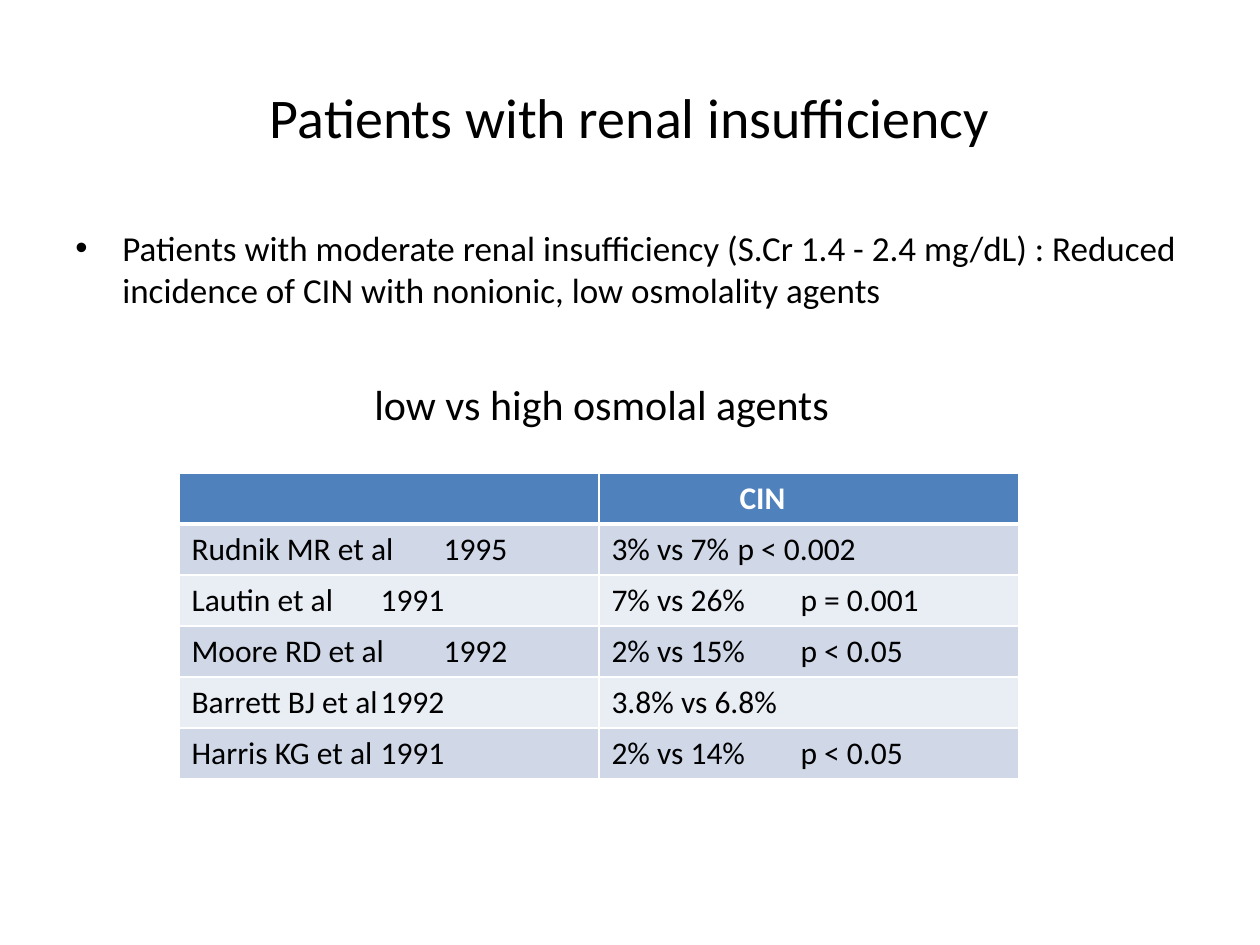
from dataclasses import dataclass

from lxml.etree import SubElement
from pptx import Presentation
from pptx.dml.color import RGBColor
from pptx.enum.text import MSO_ANCHOR, PP_ALIGN
from pptx.oxml.ns import qn
from pptx.util import Emu, Pt

EMU_PER_PIXEL = 914400 / 126
FONT = "Calibri"
COLORS = {
    "text": "000000",
    "white": "FFFFFF",
    "header": "4F81BD",
    "odd_row": "D0D8E8",
    "even_row": "E9EDF4",
}
COLUMN_WIDTH, ROW_HEIGHT = 420, 51
COLUMN_TABS = (237, 176)
HEADER_INDENT = 128


@dataclass(frozen=True)
class Line:
    text: str
    size: int
    color: str = "text"
    bold: bool = False
    align: PP_ALIGN = PP_ALIGN.LEFT
    space_before: int = 0
    left: int = 0
    hanging: int = 0
    bullet: str = ""
    tab: int = 0


@dataclass(frozen=True)
class TextBlock:
    left: int
    top: int
    width: int
    height: int
    anchor: MSO_ANCHOR
    lines: tuple[Line, ...]


@dataclass(frozen=True)
class Study:
    authors: str
    year: str
    incidence: str
    p_value: str = ""


TEXT_BLOCKS = (
    TextBlock(63, 38, 1134, 157, MSO_ANCHOR.MIDDLE, (
        Line("Patients with renal insufficiency", 32, align=PP_ALIGN.CENTER),
    )),
    TextBlock(63, 220, 1134, 624, MSO_ANCHOR.TOP, (
        Line("Patients with moderate renal insufficiency (S.Cr 1.4 - 2.4 mg/dL) : "
             "Reduced incidence of CIN with nonionic, low osmolality agents",
             20, left=47, hanging=47, bullet="•"),
        Line("low vs high osmolal agents", 24, space_before=39, left=299),
    )),
)

STUDIES = (
    Study("Rudnik MR et al", "1995", "3% vs 7%", "p < 0.002"),
    Study("Lautin et al", "1991", "7% vs 26%", "p = 0.001"),
    Study("Moore RD et al", "1992", "2% vs 15%", "p < 0.05"),
    Study("Barrett BJ et al", "1992", "3.8% vs 6.8%"),
    Study("Harris KG et al", "1991", "2% vs 14%", "p < 0.05"),
)


def px(length: int) -> Emu:
    return Emu(round(length * EMU_PER_PIXEL))


def apply_format(target, values: dict) -> None:
    for name, value in values.items():
        setattr(target, name, value)


def write_line(paragraph, line: Line) -> None:
    apply_format(paragraph, {
        "alignment": line.align,
        "space_before": Pt(line.space_before),
    })
    properties = paragraph._p.get_or_add_pPr()
    properties.set("marL", str(px(line.left)))
    properties.set("indent", str(px(-line.hanging)))
    if line.bullet:
        SubElement(properties, qn("a:buFont"), typeface="Arial")
        SubElement(properties, qn("a:buChar"), char=line.bullet)
    if line.tab:
        tabs = SubElement(properties, qn("a:tabLst"))
        SubElement(tabs, qn("a:tab"), pos=str(px(line.tab)), algn="l")
    run = paragraph.add_run()
    run.text = line.text
    apply_format(run.font, {"name": FONT, "size": Pt(line.size), "bold": line.bold})
    run.font.color.rgb = RGBColor.from_string(COLORS[line.color])


def add_text_block(slide, block: TextBlock) -> None:
    shape = slide.shapes.add_textbox(
        *map(px, (block.left, block.top, block.width, block.height)))
    frame = shape.text_frame
    apply_format(frame, {"word_wrap": True, "vertical_anchor": block.anchor})
    for index, line in enumerate(block.lines):
        write_line(frame.add_paragraph() if index else frame.paragraphs[0], line)


def style_cell(cell, fill: str, bottom_width: int) -> None:
    properties = cell._tc.get_or_add_tcPr()
    for side in "LRTB":
        width = bottom_width if side == "B" else 1
        border = SubElement(properties, qn(f"a:ln{side}"), w=str(Pt(width)))
        color = SubElement(border, qn("a:solidFill"))
        SubElement(color, qn("a:srgbClr"), val=COLORS["white"])
    cell.fill.solid()
    cell.fill.fore_color.rgb = RGBColor.from_string(COLORS[fill])


def add_study_table(slide, left: int, top: int) -> None:
    row_count = len(STUDIES) + 1
    table = slide.shapes.add_table(
        row_count, 2,
        *map(px, (left, top, 2 * COLUMN_WIDTH, row_count * ROW_HEIGHT))).table
    for column in table.columns:
        column.width = px(COLUMN_WIDTH)
    for row_index, row in enumerate(table.rows):
        row.height = px(ROW_HEIGHT)
        fill = ("even_row", "odd_row")[row_index % 2] if row_index else "header"
        for cell in row.cells:
            style_cell(cell, fill, 1 if row_index else 3)
    header = Line("CIN", 18, color="white", bold=True, left=HEADER_INDENT)
    write_line(table.cell(0, 1).text_frame.paragraphs[0], header)
    for row_index, study in enumerate(STUDIES, start=1):
        pairs = ((study.authors, study.year), (study.incidence, study.p_value))
        for column_index, (pair, tab) in enumerate(zip(pairs, COLUMN_TABS)):
            text = "\t".join(filter(None, pair))
            paragraph = table.cell(row_index, column_index).text_frame.paragraphs[0]
            write_line(paragraph, Line(text, 18, tab=tab))


def main() -> None:
    presentation = Presentation()
    apply_format(presentation, {"slide_width": px(1260), "slide_height": px(945)})
    slide = presentation.slides.add_slide(presentation.slide_layouts[6])
    for block in TEXT_BLOCKS:
        add_text_block(slide, block)
    add_study_table(slide, 179, 473)
    presentation.save("out.pptx")


if __name__ == "__main__":
    main()
